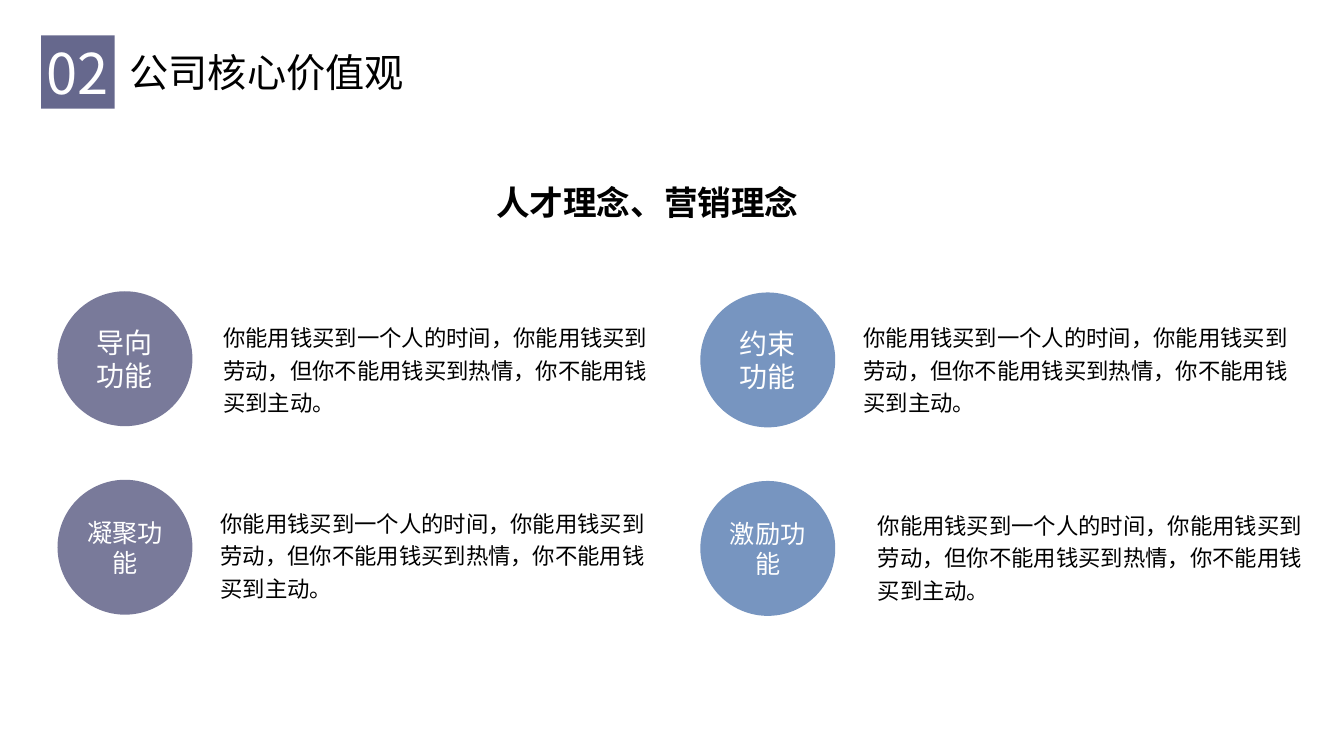
import dataclasses

import pptx
import pptx.dml.color
import pptx.enum.shapes
import pptx.enum.text
import pptx.oxml.ns
import pptx.util
from lxml import etree
from pptx.util import Cm

ALIGN = pptx.enum.text.PP_ALIGN
SHAPES = pptx.enum.shapes.MSO_SHAPE


@dataclasses.dataclass(frozen=True)
class Theme:
    """Colours, type sizes and font of the deck."""
    font: str = "Noto Sans CJK SC"
    ink: str = "000000"
    white: str = "FFFFFF"
    indigo: str = "343667"
    blue: str = "7795C0"
    number: int = 40
    title: int = 28
    heading: int = 24
    label: int = 20
    small_label: int = 18
    body: int = 16


THEME = Theme()
BODY = "你能用钱买到一个人的时间，你能用钱买到劳动，但你不能用钱买到热情，你不能用钱买到主动。"


def rgb(value):
    """Return a colour object for a hex string."""
    return pptx.dml.color.RGBColor.from_string(value)


def write(sp, text, size, color=THEME.ink, bold=False, align=ALIGN.LEFT, spacing=None):
    """Put one formatted paragraph into a shape."""
    tf = sp.text_frame
    tf.word_wrap = True
    p = tf.paragraphs[0]
    p.alignment = align
    if spacing:
        p.line_spacing = spacing
    r = p.add_run()
    r.text = text
    r.font.size = pptx.util.Pt(size)
    r.font.bold = bold
    r.font.name = THEME.font
    r.font.color.rgb = rgb(color)
    ea = etree.SubElement(r.font._element, pptx.oxml.ns.qn("a:ea"))
    ea.set("typeface", THEME.font)


def add_text(s, x, y, w, h, text, size, **fmt):
    """Add a text box that grows with its text."""
    sp = s.shapes.add_textbox(Cm(x), Cm(y), Cm(w), Cm(h))
    sp.text_frame.auto_size = pptx.enum.text.MSO_AUTO_SIZE.SHAPE_TO_FIT_TEXT
    write(sp, text, size, **fmt)


def add_badge(s, kind, x, y, side, text, size, fill, opacity=100):
    """Add a filled shape with centred white text."""
    sp = s.shapes.add_shape(kind, Cm(x), Cm(y), Cm(side), Cm(side))
    sp.shadow.inherit = False
    sp.line.fill.background()
    sp.fill.solid()
    sp.fill.fore_color.rgb = rgb(fill)
    if opacity < 100:
        clr = sp._element.spPr.find(".//" + pptx.oxml.ns.qn("a:srgbClr"))
        alpha = etree.SubElement(clr, pptx.oxml.ns.qn("a:alpha"))
        alpha.set("val", str(opacity * 1000))
    sp.text_frame.vertical_anchor = pptx.enum.text.MSO_ANCHOR.MIDDLE
    write(sp, text, size, color=THEME.white, align=ALIGN.CENTER)
    return sp


def add_header(s, x, y, number, title):
    """Place the section number and the slide title."""
    sp = add_badge(s, SHAPES.RECTANGLE, x, y, 1.85, number, THEME.number, THEME.indigo, 75)
    sp.text_frame.margin_left = sp.text_frame.margin_right = 0
    add_text(s, x + 1.98, y + 0.2, 8.2, 1.45, title, THEME.title)


def add_function(s, x, y, label, size, fill, opacity, dx, dy):
    """Place a labelled circle and its description."""
    add_badge(s, SHAPES.OVAL, x, y, 3.4, label, size, fill, opacity)
    add_text(s, x + dx, y + dy, 11.46, 2.72, BODY, THEME.body, spacing=1.2)


def add_functions(s, x, y):
    """Place the two by two grid of functions."""
    columns = ((0, 0, THEME.indigo, 66), (16.2, 0.03, THEME.blue, 100))
    rows = (
        (THEME.label, (("导向功能", 3.93, 0.58), ("约束功能", 3.86, 0.55))),
        (THEME.small_label, (("凝聚功能", 3.86, 0.51), ("激励功能", 4.22, 0.53))),
    )
    for i, (size, items) in enumerate(rows):
        for (left, drop, fill, opacity), (label, dx, dy) in zip(columns, items):
            add_function(s, x + left, y + i * 4.75 + drop, label, size, fill, opacity, dx, dy)


def main():
    """Build and save the slide."""
    prs = pptx.Presentation()
    prs.slide_width, prs.slide_height = Cm(33.87), Cm(19.05)
    s = prs.slides.add_slide(prs.slide_layouts[6])
    add_header(s, 1.04, 0.89, "02", "公司核心价值观")
    add_text(s, 11.73, 4.45, 9.17, 1.27, "人才理念、营销理念", THEME.heading,
             bold=True, align=ALIGN.CENTER)
    add_functions(s, 1.45, 7.34)
    prs.save("out.pptx")


if __name__ == "__main__":
    main()
